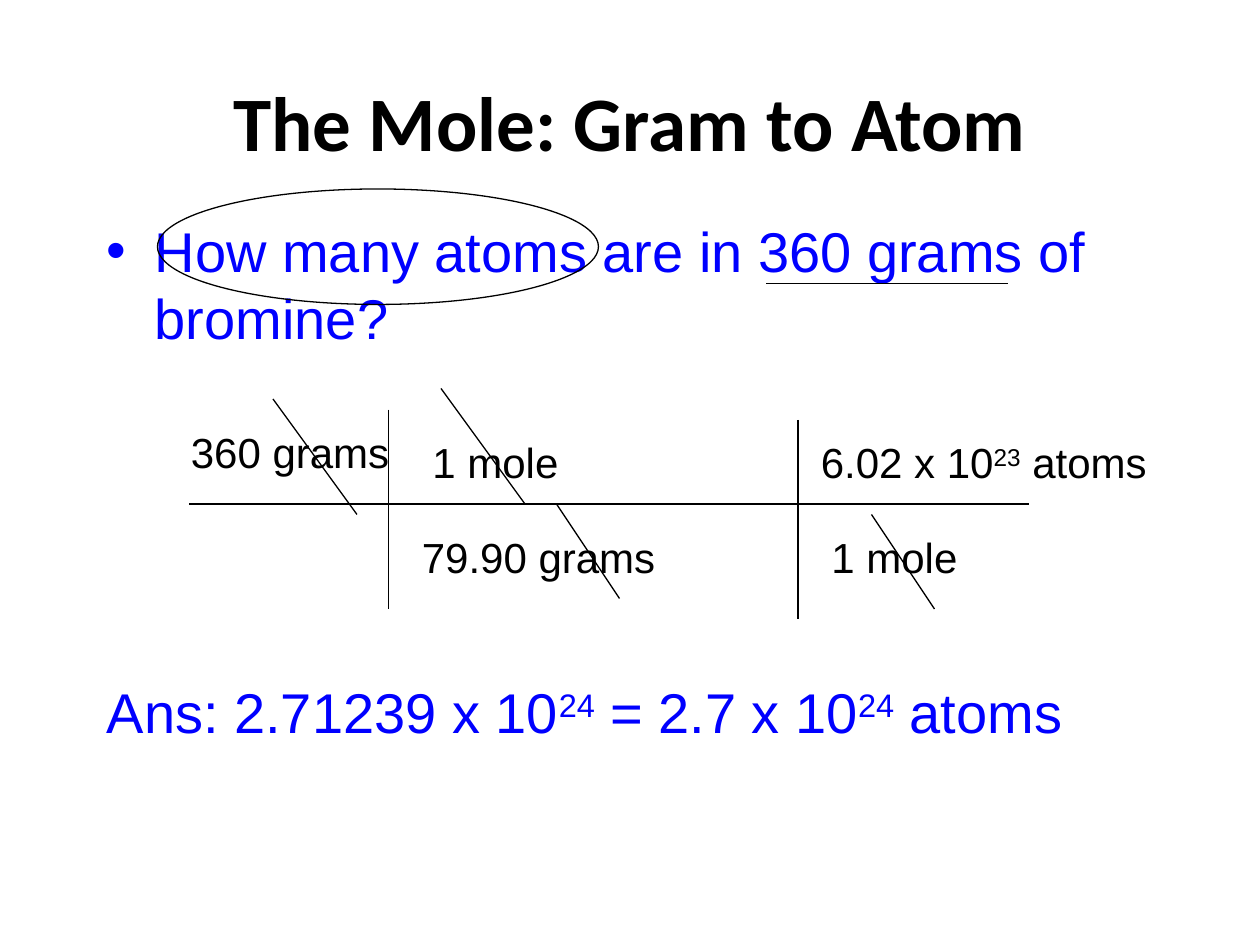
from lxml import etree
from pptx import Presentation
from pptx import util as u
from pptx.dml.color import RGBColor
from pptx.enum import shapes, text
from pptx.oxml.ns import qn

COLORS = {"ink": "000000", "question": "0000FF"}
COLS, ROWS = 120, 90  # twelve grid steps to the inch


class Board:
    """Holds the style and the current slide; places are grid columns and rows."""

    def __init__(self, prs):
        self.s = prs.slides.add_slide(prs.slide_layouts[6])
        self.dx, self.dy = prs.slide_width / COLS, prs.slide_height / ROWS

    def place(self, col, row, cols, rows):
        return (round(col * self.dx), round(row * self.dy),
                round(cols * self.dx), round(rows * self.dy))

    def stroke(self, sp):
        sp.line.color.rgb = RGBColor.from_string(COLORS["ink"])
        sp.line.width = u.Pt(0.75)

    def line(self, *ends):
        sp = self.s.shapes.add_connector(
            shapes.MSO_CONNECTOR.STRAIGHT, *self.place(*ends))
        self.stroke(sp)
        etree.SubElement(sp._element.spPr, qn("a:effectLst"))

    def ellipse(self, *box):
        sp = self.s.shapes.add_shape(shapes.MSO_SHAPE.OVAL, *self.place(*box))
        sp.shadow.inherit = False
        sp.fill.background()
        self.stroke(sp)

    def box(self, *box):
        tf = self.s.shapes.add_textbox(*self.place(*box)).text_frame
        tf.word_wrap = True
        return tf

    def add_words(self, p, words, size, color="ink", font="Arial", bold=False):
        """Fill a paragraph; every part after a ^ alternates with superscript."""
        for i, part in enumerate(words.split("^")):
            r = p.add_run()
            r.text = part
            r.font.size, r.font.name, r.font.bold = u.Pt(size), font, bold
            r.font.color.rgb = RGBColor.from_string(COLORS[color])
            if i % 2:
                r._r.get_or_add_rPr().set("baseline", "30000")

    def title(self, words, *box):
        tf = self.box(*box)
        tf.vertical_anchor = text.MSO_ANCHOR.MIDDLE
        p = tf.paragraphs[0]
        p.alignment = text.PP_ALIGN.CENTER
        self.add_words(p, words, 44, font="Calibri", bold=True)

    def problem(self, question, answer, *box):
        tf = self.box(*box)
        p = tf.paragraphs[0]
        p.space_before = u.Pt(6.4)
        pPr = p._p.get_or_add_pPr()
        pPr.set("marL", str(u.Inches(0.38)))
        pPr.set("indent", str(u.Inches(-0.38)))
        etree.SubElement(pPr, qn("a:buFont"), typeface="Arial")
        etree.SubElement(pPr, qn("a:buChar"), char="•")
        self.add_words(p, question, 32, "question")
        p = tf.add_paragraph()
        p.space_before = u.Pt(187)
        self.add_words(p, answer, 32, "question")

    def quantity(self, words, col, row):
        tf = self.box(col, row, 41, 6)
        tf.auto_size = text.MSO_AUTO_SIZE.SHAPE_TO_FIT_TEXT
        self.add_words(tf.paragraphs[0], words, 24)


def main():
    prs = Presentation()
    prs.slide_width, prs.slide_height = u.Inches(10), u.Inches(7.5)
    b = Board(prs)

    b.problem("How many atoms are in 360 grams of bromine?",
              "Ans: 2.71239 x 10^24^ = 2.7 x 10^24^ atoms", 9, 20, 102, 60)
    b.title("The Mole: Gram to Atom", 9, 4, 102, 15)

    b.ellipse(15, 18, 42, 11)
    given_underline = (73, 27, 96, 27)
    fraction_bar = (18, 48, 98, 48)
    dividers = [(37, 39, 37, 58), (76, 40, 76, 59)]
    cancelled_units = [(26, 38, 34, 49), (53, 48, 59, 57),
                       (42, 37, 50, 48), (83, 49, 89, 58)]
    for ends in [given_underline, fraction_bar, *dividers, *cancelled_units]:
        b.line(*ends)

    for words, col, row in [("360 grams", 17, 40),
                            ("1 mole", 40, 41),
                            ("79.90 grams", 39, 50),
                            ("6.02 x 10^23^ atoms", 77, 41),
                            ("1 mole", 78, 50)]:
        b.quantity(words, col, row)

    prs.save("out.pptx")


if __name__ == "__main__":
    main()
